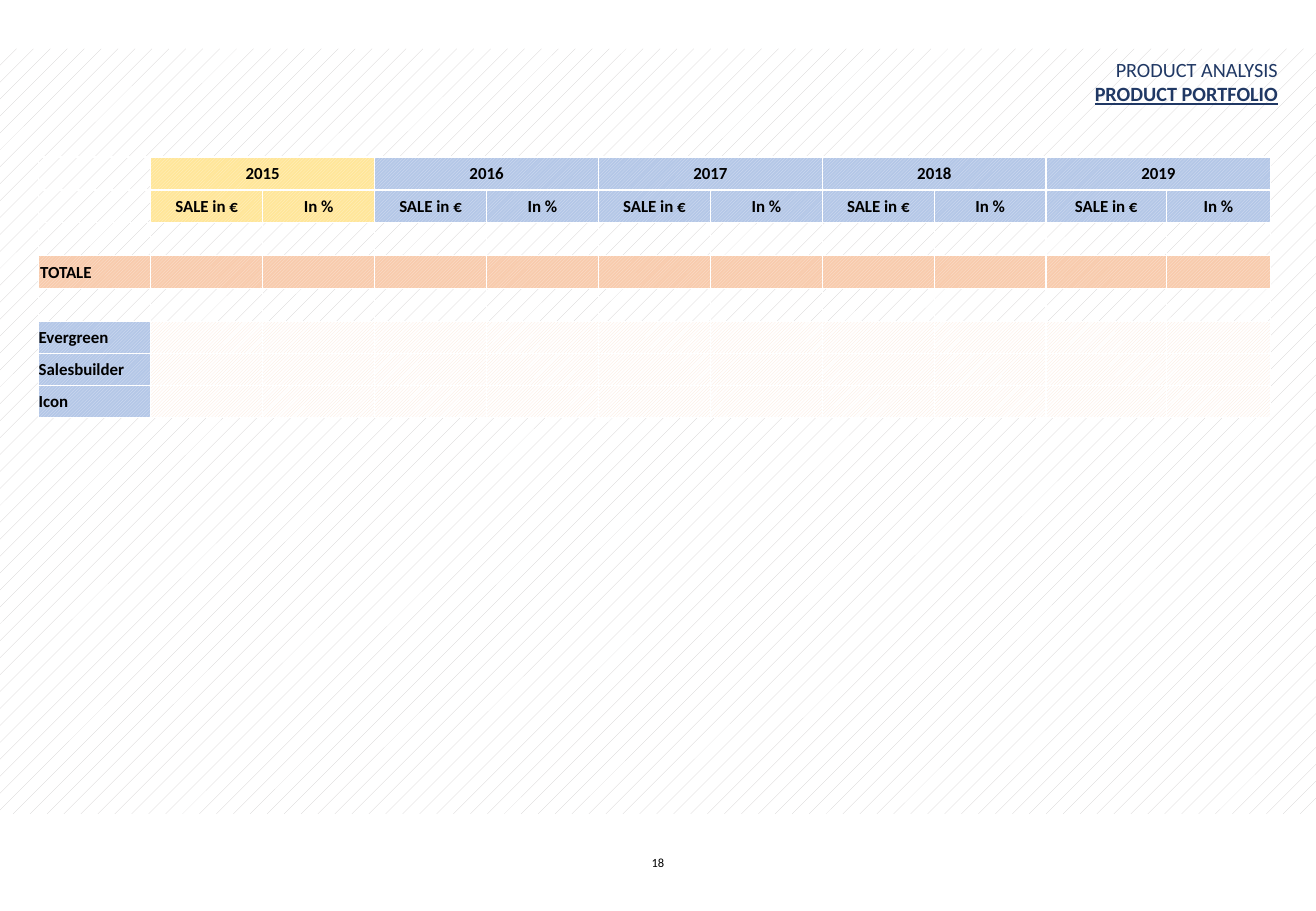
from dataclasses import dataclass

from lxml import etree
from pptx import Presentation
from pptx.dml.color import RGBColor
from pptx.enum import dml, shapes, text
from pptx.oxml import ns
from pptx.util import Cm, Pt

# Content
TITLE_LINES = ["PRODUCT ANALYSIS", "PRODUCT PORTFOLIO"]
YEARS = ["2015", "2016", "2017", "2018", "2019"]
MEASURES = ["SALE in €", "In %"]
TOTAL = "TOTALE"
CATEGORIES = ["Evergreen", "Salesbuilder", "Icon"]
PAGE_NUMBER = "18"


@dataclass(frozen=True)
class Theme:
    font: str = "Calibri"
    title_size: float = 12
    table_size: float = 10
    page_size: float = 7.4
    navy: str = "203864"
    black: str = "000000"
    white: str = "FFFFFF"
    # Pattern colours as (foreground, background)
    backdrop: tuple = ("D0CECE", "FFFFFF")
    yellow: tuple = ("FFF2CC", "FFE699")
    blue: tuple = ("DAE3F3", "B4C7E7")
    orange: tuple = ("FBE5D6", "F8CBAD")
    pale: tuple = ("FBE5D6", "FFFFFF")


THEME = Theme()

# Geometry in centimetres
SLIDE_WIDTH, SLIDE_HEIGHT = 27.51, 19.05
COLUMN_WIDTHS = [2.34] * 9 + [2.51, 2.18]
ROW_HEIGHTS = [0.69] * 5 + [0.67] * 3
TOTAL_ROW = 3
FIRST_CATEGORY_ROW = 5


def write(paragraph, words, size, color=THEME.black, bold=False,
          underline=False, align=text.PP_ALIGN.LEFT):
    paragraph.alignment = align
    run = paragraph.add_run()
    run.text = words
    font = run.font
    font.name, font.size = THEME.font, Pt(size)
    font.bold, font.underline = bold, underline
    font.color.rgb = RGBColor.from_string(color)


def fill_pattern(fill, colors, pattern=dml.MSO_PATTERN.DARK_UPWARD_DIAGONAL):
    fill.patterned()
    fill.pattern = pattern
    fill.fore_color.rgb, fill.back_color.rgb = map(RGBColor.from_string, colors)


def add_borders(cell, color=THEME.white, width=Pt(1)):
    properties = cell._tc.get_or_add_tcPr()
    for index, side in enumerate(("lnL", "lnR", "lnT", "lnB")):
        line = etree.Element(ns.qn(f"a:{side}"), w=str(width))
        solid = etree.SubElement(line, ns.qn("a:solidFill"))
        etree.SubElement(solid, ns.qn("a:srgbClr"), val=color)
        properties.insert(index, line)


def cell_text(row, column):
    if column == 0:
        if row == TOTAL_ROW:
            return TOTAL
        return CATEGORIES[row - FIRST_CATEGORY_ROW] if row >= FIRST_CATEGORY_ROW else ""
    year, measure = divmod(column - 1, len(MEASURES))
    if row == 0:
        return YEARS[year] if measure == 0 else ""
    return MEASURES[measure] if row == 1 else ""


def cell_colors(row, column):
    if row < 2 and column > 0:
        return THEME.yellow if column <= len(MEASURES) else THEME.blue
    if row == TOTAL_ROW:
        return THEME.orange
    if row >= FIRST_CATEGORY_ROW:
        return THEME.blue if column == 0 else THEME.pale
    return None


def format_cell(cell, row, column):
    inset = Cm(0) if row >= FIRST_CATEGORY_ROW else Cm(0.03)
    cell.margin_left = cell.margin_right = cell.margin_top = inset
    cell.margin_bottom = Cm(0)
    cell.vertical_anchor = text.MSO_ANCHOR.MIDDLE
    colors = cell_colors(row, column)
    if colors:
        fill_pattern(cell.fill, colors)
    else:
        cell.fill.background()
    add_borders(cell)
    paragraph = cell.text_frame.paragraphs[0]
    words = cell_text(row, column)
    if words:
        align = text.PP_ALIGN.CENTER if column else text.PP_ALIGN.LEFT
        write(paragraph, words, THEME.table_size, bold=True, align=align)
    else:
        # An empty cell takes its line height from the end mark
        etree.SubElement(paragraph._p, ns.qn("a:endParaRPr"),
                         sz=str(int(THEME.table_size * 100)))


def add_backdrop(slide):
    backdrop = slide.shapes.add_shape(
        shapes.MSO_SHAPE.RECTANGLE, Cm(0), Cm(1.02), Cm(SLIDE_WIDTH), Cm(16))
    backdrop.shadow.inherit = False
    backdrop.line.fill.background()
    fill_pattern(backdrop.fill, THEME.backdrop, dml.MSO_PATTERN.PERCENT_5)
    slide.shapes.title.element.addprevious(backdrop.element)


def add_title(slide):
    title = slide.shapes.title
    title.left, title.top = Cm(19.05), Cm(1.07)
    title.width, title.height = Cm(7.92), Cm(1.27)
    frame = title.text_frame
    frame.auto_size = text.MSO_AUTO_SIZE.NONE
    frame.vertical_anchor = text.MSO_ANCHOR.TOP
    for index, words in enumerate(TITLE_LINES):
        paragraph = frame.add_paragraph() if index else frame.paragraphs[0]
        write(paragraph, words, THEME.title_size, color=THEME.navy,
              bold=index > 0, underline=index > 0, align=text.PP_ALIGN.RIGHT)


def add_portfolio_table(slide):
    table = slide.shapes.add_table(
        len(ROW_HEIGHTS), len(COLUMN_WIDTHS), Cm(0.81), Cm(3.28),
        Cm(sum(COLUMN_WIDTHS)), Cm(sum(ROW_HEIGHTS))).table
    table.first_row = table.horz_banding = False
    for column, width in zip(table.columns, COLUMN_WIDTHS):
        column.width = Cm(width)
    for row, height in zip(table.rows, ROW_HEIGHTS):
        row.height = Cm(height)
    for row in range(len(ROW_HEIGHTS)):
        for column in range(len(COLUMN_WIDTHS)):
            format_cell(table.cell(row, column), row, column)
    # Each year spans its measures
    span = len(MEASURES)
    for first in range(1, len(COLUMN_WIDTHS), span):
        table.cell(0, first).merge(table.cell(0, first + span - 1))


def add_page_number(slide):
    width = 6.2
    box = slide.shapes.add_textbox(
        Cm((SLIDE_WIDTH - width) / 2), Cm(17.75), Cm(width), Cm(1.02))
    box.text_frame.word_wrap = True
    write(box.text_frame.paragraphs[0], PAGE_NUMBER, THEME.page_size,
          align=text.PP_ALIGN.CENTER)


def main():
    presentation = Presentation()
    presentation.slide_width = Cm(SLIDE_WIDTH)
    presentation.slide_height = Cm(SLIDE_HEIGHT)
    slide = presentation.slides.add_slide(presentation.slide_layouts[5])
    add_backdrop(slide)
    add_title(slide)
    add_portfolio_table(slide)
    add_page_number(slide)
    presentation.save("out.pptx")


if __name__ == "__main__":
    main()
